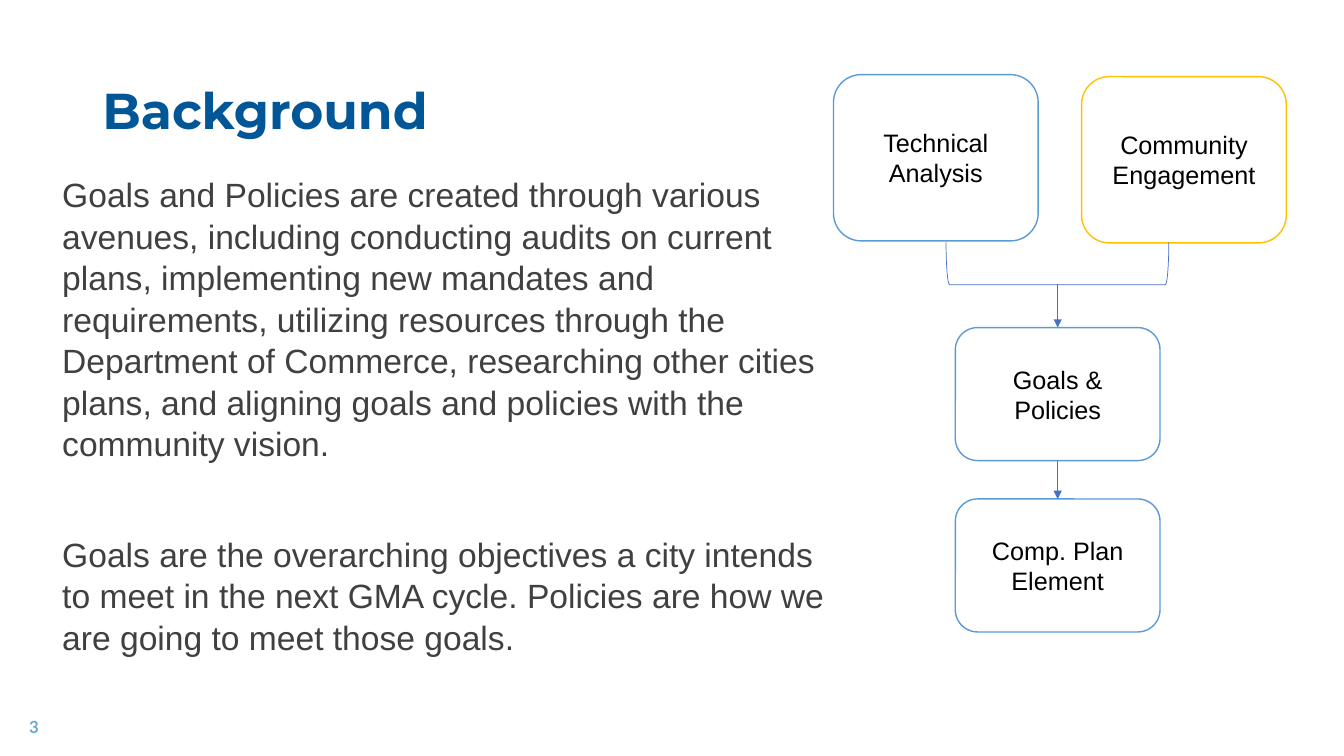
from lxml.etree import SubElement
from pptx import Presentation
from pptx.dml.color import RGBColor
from pptx.enum.shapes import MSO_CONNECTOR, MSO_SHAPE
from pptx.enum.text import MSO_ANCHOR, PP_ALIGN
from pptx.oxml.ns import qn
from pptx.util import Pt


def color(code):
    return RGBColor.from_string(code)


class Board:
    blue = "5B9BD5"
    gold = "FFC000"
    link = "4472C4"
    wide = 146.2

    def __init__(self, slide):
        self.shapes = slide.shapes

    def run(self, para, text, size, font, tint, bold=False):
        run = para.add_run()
        run.text = text
        run.font.size = Pt(size)
        run.font.name = font
        run.font.bold = bold
        run.font.color.rgb = color(tint)

    def text(self, area, parts, size, font, tint, bold=False,
             anchor=MSO_ANCHOR.MIDDLE, pitch=None, gap=0):
        frame = self.shapes.add_textbox(*map(Pt, area)).text_frame
        frame.word_wrap = True
        frame.vertical_anchor = anchor
        for num, part in enumerate(parts):
            para = frame.add_paragraph() if num else frame.paragraphs[0]
            if pitch:
                para.line_spacing = pitch
            if num:
                para.space_before = Pt(gap)
            self.run(para, part, size, font, tint, bold)

    def shape(self, kind, area, tint, width):
        shape = self.shapes.add_shape(kind, *map(Pt, area))
        shape.shadow.inherit = False
        shape.line.color.rgb = color(tint)
        shape.line.width = Pt(width)
        return shape

    def box(self, left, top, high, text, tint):
        area = (left, top, self.wide, high)
        box = self.shape(MSO_SHAPE.ROUNDED_RECTANGLE, area, tint, 1)
        box.fill.solid()
        box.fill.fore_color.rgb = color("FFFFFF")
        frame = box.text_frame
        frame.word_wrap = True
        frame.vertical_anchor = MSO_ANCHOR.MIDDLE
        para = frame.paragraphs[0]
        para.alignment = PP_ALIGN.CENTER
        self.run(para, text, 18, "Arial", "000000")
        return box

    def brace(self, area):
        brace = self.shape(MSO_SHAPE.RIGHT_BRACKET, area, self.link, 0.5)
        brace.rotation = 90
        brace.fill.background()

    def arrow(self, mid, top, end, goal, start=None):
        arrow = self.shapes.add_connector(
            MSO_CONNECTOR.STRAIGHT, Pt(mid), Pt(top), Pt(mid), Pt(end))
        if start is not None:
            arrow.begin_connect(start, 2)
        arrow.end_connect(goal, 0)
        arrow.line.color.rgb = color(self.link)
        arrow.line.width = Pt(0.5)
        SubElement(arrow.line._get_or_add_ln(), qn("a:tailEnd"), type="triangle")
        SubElement(arrow._element.spPr, qn("a:effectLst"))


def main():
    deck = Presentation()
    deck.slide_width, deck.slide_height = Pt(960), Pt(540)
    board = Board(deck.slides.add_slide(deck.slide_layouts[6]))

    board.text((66, 28.8, 828, 104.4), ["Background"],
               36, "Montserrat", "005696", bold=True, pitch=0.9)
    board.text((37.4, 120.2, 571.7, 330.5), [
        "Goals and Policies are created through various avenues, including "
        "conducting audits on current plans, implementing new mandates and "
        "requirements, utilizing resources through the Department of Commerce, "
        "researching other cities plans, and aligning goals and policies with "
        "the community vision.",
        "Goals are the overarching objectives a city intends to meet in the "
        "next GMA cycle. Policies are how we are going to meet those goals.",
    ], 24, "Arial", "404040", anchor=MSO_ANCHOR.TOP, pitch=Pt(29.6), gap=49.6)
    board.text((13.7, 504.7, 216, 28.8), ["3"], 12, "Lato", "66AAD3", bold=True)

    left, mid = 682.4, 755.5
    board.box(595.4, 53.3, 118.8, "Technical Analysis", board.blue)
    board.box(772.6, 54.7, 118.8, "Community Engagement", board.gold)
    goals = board.box(left, 234, 95, "Goals & Policies", board.blue)
    plan = board.box(left, 356.4, 95, "Comp. Plan Element", board.blue)
    board.brace((740.2, 108.7, 30.2, 159.1))
    board.arrow(mid, 203, 234, goals)
    board.arrow(mid, 329, 356.4, plan, goals)

    deck.save("out.pptx")


if __name__ == "__main__":
    main()
